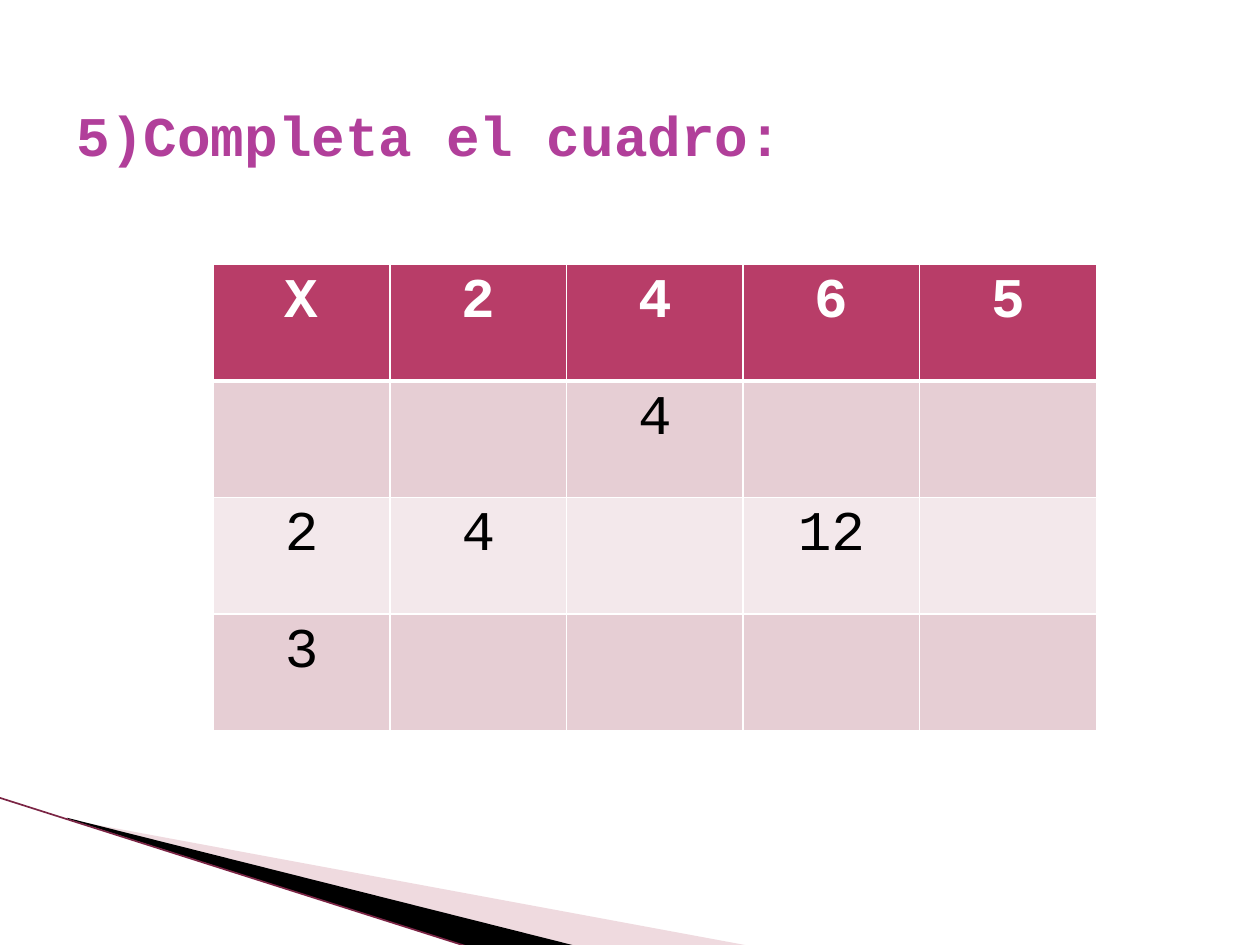
from dataclasses import dataclass

from lxml.etree import SubElement
from pptx import Presentation
from pptx.dml.color import RGBColor as RGB
from pptx.enum.shapes import MSO_CONNECTOR as CONN
from pptx.enum.text import MSO_ANCHOR as ANCHOR, PP_ALIGN as ALIGN
from pptx.oxml.ns import qn
from pptx.slide import Slide
from pptx.table import _Cell as Cell
from pptx.text.text import _Paragraph as Paragraph
from pptx.util import Pt


@dataclass(frozen=True)
class Theme:
    font: str = "Courier New"
    size: float = 32
    title: str = "B13F9A"
    header: str = "B83D68"
    bands: tuple[str, str] = ("E6CED4", "F3E8EB")
    light: str = "FFFFFF"
    dark: str = "000000"
    wedge: str = "D8A3AF"
    edge: str = "7B2545"


@dataclass(frozen=True)
class Wedge:
    points: tuple[tuple[float, float], ...]
    color: str
    opacity: int = 100


THEME = Theme()
WEDGES = (
    Wedge(((39.6, 468.5), (428.4, 540.5), (328.3, 540.5), (39.6, 468)), THEME.wedge, 40),
    Wedge(((38.2, 467.3), (329, 540.5), (268, 541.2), (39, 468)), THEME.dark),
)
ROWS = (
    ("X", "2", "4", "6", "5"),
    ("", "", "4", "", ""),
    ("2", "4", "", "12", ""),
    ("3", "", "", "", ""),
)
COL_WIDTH, ROW_HEIGHT = 100.9, 66.6


def style_text(p: Paragraph, color: str, bold: bool) -> None:
    """Apply the common typeface to every run of a paragraph."""
    for r in p.runs:
        r.font.name, r.font.size, r.font.bold = THEME.font, Pt(THEME.size), bold
        r.font.color.rgb = RGB.from_string(color)


def add_title(s: Slide, text: str) -> None:
    """Place and format the title placeholder."""
    sp = s.shapes.title
    sp.left, sp.top, sp.width, sp.height = Pt(36.5), Pt(31.7), Pt(648), Pt(90)
    tf = sp.text_frame
    tf.text = text
    tf.vertical_anchor = ANCHOR.MIDDLE
    tf.paragraphs[0].alignment = ALIGN.LEFT
    style_text(tf.paragraphs[0], THEME.title, True)


def add_wedge(s: Slide, wedge: Wedge) -> None:
    """Draw one sliver of the corner ornament."""
    first, *rest = [(Pt(x), Pt(y)) for x, y in wedge.points]
    builder = s.shapes.build_freeform(*first)
    builder.add_line_segments(rest, close=True)
    sp = builder.convert_to_shape()
    sp.shadow.inherit = False
    sp.line.fill.background()
    sp.fill.solid()
    sp.fill.fore_color.rgb = RGB.from_string(wedge.color)
    if wedge.opacity < 100:
        color = sp.element.spPr.find(f"{qn('a:solidFill')}/{qn('a:srgbClr')}")
        SubElement(color, qn("a:alpha"), val=str(wedge.opacity * 1000))


def add_edge(s: Slide) -> None:
    """Draw the thin line along the ornament."""
    line = s.shapes.add_connector(CONN.STRAIGHT, Pt(-0.5), Pt(455.8), Pt(268), Pt(541.2))
    line.line.width = Pt(0.95)
    line.line.color.rgb = RGB.from_string(THEME.edge)
    SubElement(line.element.spPr, qn("a:effectLst"))


def add_borders(cell: Cell, top: float, bottom: float) -> None:
    """Give a cell solid borders with the stated top and bottom widths."""
    props = cell._tc.get_or_add_tcPr()
    for side, width in (("L", 1), ("R", 1), ("T", top), ("B", bottom)):
        ln = SubElement(props, qn(f"a:ln{side}"), w=str(Pt(width)))
        fill = SubElement(ln, qn("a:solidFill"))
        SubElement(fill, qn("a:srgbClr"), val=THEME.light)


def add_grid(s: Slide) -> None:
    """Build the multiplication table."""
    cols = len(ROWS[0])
    table = s.shapes.add_table(
        len(ROWS), cols, Pt(122), Pt(151.2), Pt(COL_WIDTH * cols), Pt(ROW_HEIGHT * len(ROWS))
    ).table
    for col in table.columns:
        col.width = Pt(COL_WIDTH)
    for i, values in enumerate(ROWS):
        table.rows[i].height = Pt(ROW_HEIGHT)
        header = i == 0
        for j, value in enumerate(values):
            cell = table.cell(i, j)
            add_borders(cell, 3 if i == 1 else 1, 3 if header else 1)
            cell.fill.solid()
            fill = THEME.header if header else THEME.bands[(i - 1) % 2]
            cell.fill.fore_color.rgb = RGB.from_string(fill)
            p = cell.text_frame.paragraphs[0]
            p.alignment = ALIGN.CENTER
            if value:
                p.text = value
                style_text(p, THEME.light if header else THEME.dark, header)


def main() -> None:
    """Build and save the slide."""
    prs = Presentation()
    prs.slide_width, prs.slide_height = Pt(720), Pt(540)
    s = prs.slides.add_slide(prs.slide_layouts[5])
    for wedge in WEDGES:
        add_wedge(s, wedge)
    add_edge(s)
    add_title(s, "5)Completa el cuadro:")
    add_grid(s)
    prs.save("out.pptx")


if __name__ == "__main__":
    main()
